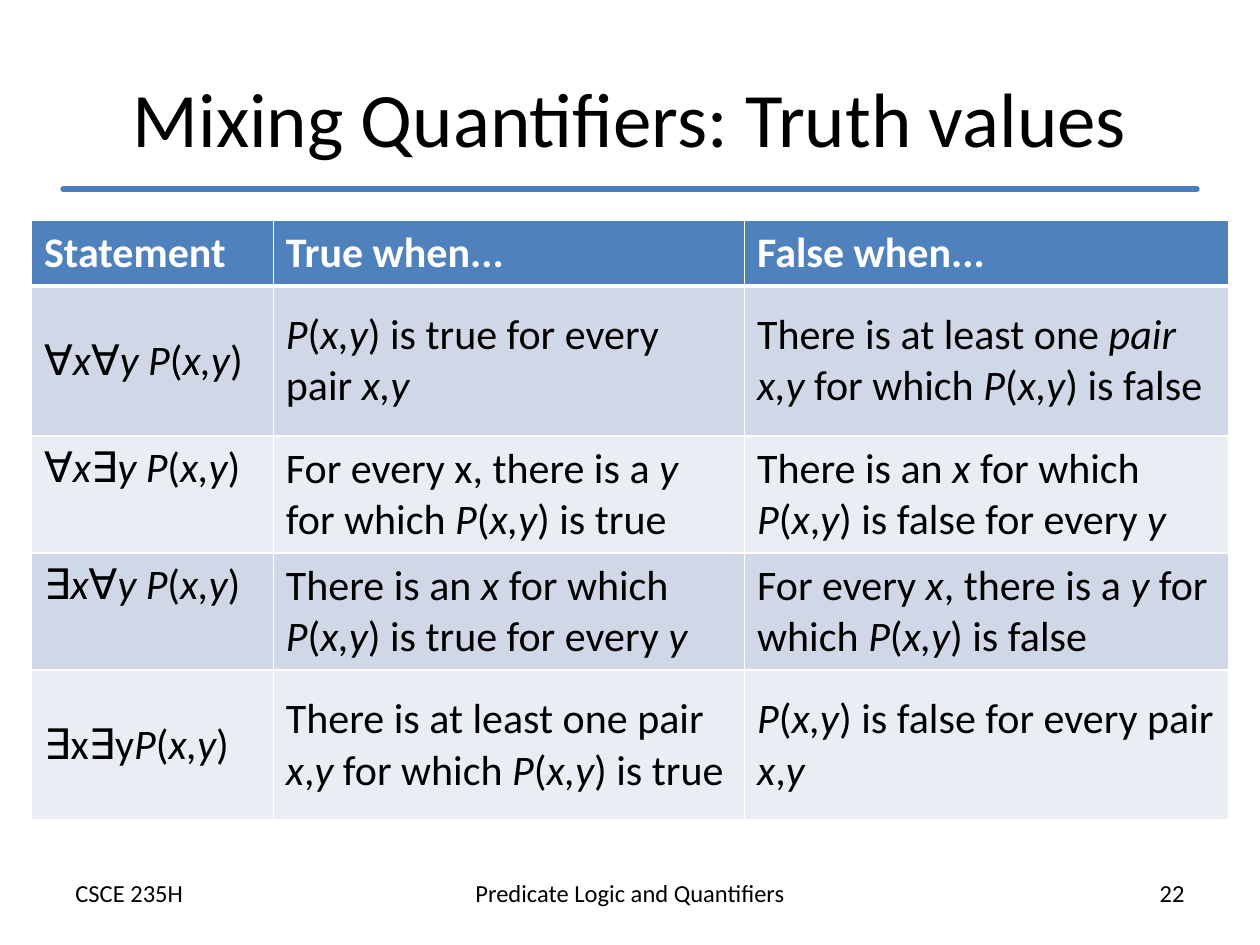
import pptx
import pptx.util
import pptx.oxml
import pptx.oxml.ns
from lxml import etree
from pptx.dml.color import RGBColor
from pptx.enum.shapes import MSO_CONNECTOR
from pptx.enum.text import MSO_ANCHOR, PP_ALIGN
from pptx.util import Inches, Pt

FONT = "Calibri"
COLORS = {
    "text": "000000",
    "white": "FFFFFF",
    "header": "4F81BD",
    "band_dark": "D0D8E8",
    "band_light": "E9EDF4",
    "rule": "4B7EBC",
}

COLUMN_WIDTHS = [1.92, 3.74, 3.84]
ROW_HEIGHTS = [0.52, 1.19, 0.93, 0.93, 1.19]
TOP_ANCHORED = {(2, 0), (3, 0)}

# Asterisks enclose italic text
ROWS = [
    ["Statement", "True when...", "False when..."],
    ["∀*x*∀*y P*(*x,y*)",
     "*P*(*x,y*) is true for every pair *x,y*",
     "There is at least one* pair x,y *for which* P*(*x,y*) is false"],
    ["∀*x*∃*y P*(*x,y*)",
     "For every x, there is a *y* for which *P*(*x,y*) is true",
     "There is an *x* for which *P*(*x*,*y*) is false for every *y*"],
    ["∃*x*∀*y P*(*x,y*)",
     "There is an* x *for which* P*(*x,y*) is true for every *y*",
     "For every *x*, there is a *y* for which *P*(*x,y*) is false"],
    ["∃x∃y*P*(*x,y*)",
     "There is at least one pair *x*,*y* for which *P*(*x,y*) is true",
     "*P*(*x,y*) is false for every pair *x*,*y*"],
]


def rgb(name):
    return RGBColor.from_string(COLORS[name])


def add_runs(p, text, size, color="text", bold=False):
    for i, part in enumerate(text.split("*")):
        if part:
            r = p.add_run()
            r.text = part
            r.font.name = FONT
            r.font.size = Pt(size)
            r.font.bold = bold
            r.font.italic = i % 2 == 1
            r.font.color.rgb = rgb(color)


def set_borders(cell, widths):
    """Draw white borders; widths maps L, R, T, B to points."""
    tcPr = cell._tc.get_or_add_tcPr()
    for i, side in enumerate("LRTB"):
        ln = pptx.oxml.parse_xml(
            f'<a:ln{side} {pptx.oxml.ns.nsdecls("a")} w="{Pt(widths[side])}">'
            f'<a:solidFill><a:srgbClr val="{COLORS["white"]}"/></a:solidFill>'
            f'</a:ln{side}>')
        tcPr.insert(i, ln)


def add_title(s, text, left, top, width, height):
    sp = s.shapes.title
    sp.left, sp.top = Inches(left), Inches(top)
    sp.width, sp.height = Inches(width), Inches(height)
    tf = sp.text_frame
    tf.vertical_anchor = MSO_ANCHOR.MIDDLE
    p = tf.paragraphs[0]
    p.alignment = PP_ALIGN.CENTER
    add_runs(p, text, 44)


def add_rule(s, left, top, width):
    line = s.shapes.add_connector(
        MSO_CONNECTOR.STRAIGHT, Inches(left), Inches(top),
        Inches(left + width), Inches(top))
    line.line.color.rgb = rgb("rule")
    line.line.width = Pt(3)
    line.line._get_or_add_ln().set("cap", "rnd")
    etree.SubElement(line._element.spPr, pptx.oxml.ns.qn("a:effectLst"))


def add_truth_table(s, left, top, width, height):
    table = s.shapes.add_table(
        len(ROWS), len(COLUMN_WIDTHS), Inches(left), Inches(top),
        Inches(width), Inches(height)).table
    for col, w in zip(table.columns, COLUMN_WIDTHS):
        col.width = Inches(w)
    for i, (row, h) in enumerate(zip(table.rows, ROW_HEIGHTS)):
        row.height = Inches(h)
        header = i == 0
        fill = "header" if header else ("band_light", "band_dark")[i % 2]
        for j, cell in enumerate(row.cells):
            top_anchored = (i, j) in TOP_ANCHORED
            cell.vertical_anchor = MSO_ANCHOR.TOP if top_anchored else MSO_ANCHOR.MIDDLE
            cell.fill.solid()
            cell.fill.fore_color.rgb = rgb(fill)
            # A thicker line parts the header from the body
            set_borders(cell, {"L": 1, "R": 1, "T": 3 if i == 1 else 1,
                               "B": 3 if header else 1})
            add_runs(cell.text_frame.paragraphs[0], ROWS[i][j], 24,
                     "white" if header else "text", header)


def add_footer(s, left, top, width, height):
    items = [("CSCE 235H", PP_ALIGN.LEFT),
             ("Predicate Logic and Quantifiers", PP_ALIGN.CENTER),
             ("22", PP_ALIGN.RIGHT)]
    box_width = 2.92
    step = (width - box_width) / (len(items) - 1)
    for i, (text, align) in enumerate(items):
        sp = s.shapes.add_textbox(Inches(left + i * step), Inches(top),
                                  Inches(box_width), Inches(height))
        tf = sp.text_frame
        tf.word_wrap = True
        p = tf.paragraphs[0]
        p.alignment = align
        add_runs(p, text, 14)


def main():
    prs = pptx.Presentation()
    prs.slide_width, prs.slide_height = Inches(10), Inches(7.5)
    s = prs.slides.add_slide(prs.slide_layouts[5])
    add_footer(s, 0.5, 6.92, 9, 0.34)
    add_rule(s, 0.5, 1.5, 9)
    add_title(s, "Mixing Quantifiers: Truth values", 0.5, 0.3, 9, 1.25)
    add_truth_table(s, 0.25, 1.75, 9.5, 4.75)
    prs.save("out.pptx")


if __name__ == "__main__":
    main()
